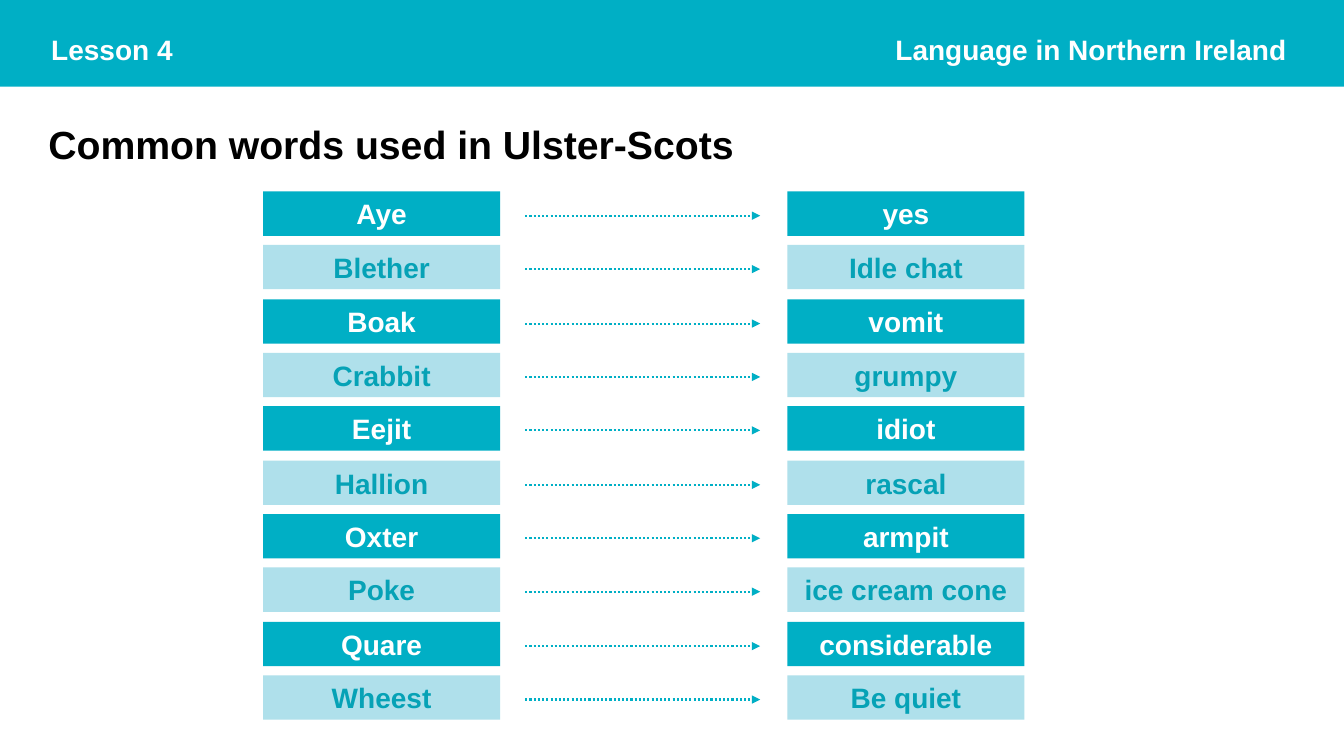
from lxml import etree
from pptx import Presentation
from pptx.dml.color import RGBColor
from pptx.enum.dml import MSO_LINE
from pptx.enum.shapes import MSO_CONNECTOR, MSO_SHAPE
from pptx.enum.text import MSO_ANCHOR, PP_ALIGN
from pptx.oxml.ns import qn
from pptx.util import Pt

PX = 9144
RECT, STRAIGHT = MSO_SHAPE.RECTANGLE, MSO_CONNECTOR.STRAIGHT
LEFT, CENTER, RIGHT = PP_ALIGN.LEFT, PP_ALIGN.CENTER, PP_ALIGN.RIGHT
TOP, MIDDLE = MSO_ANCHOR.TOP, MSO_ANCHOR.MIDDLE
DOTTED = MSO_LINE.ROUND_DOT
TEAL, PALE, DEEP, WHITE, BLACK = "00AFC5", "AFE0EB", "06A2B6", "FFFFFF", "000000"
WORDS = [
    ("Aye", "yes"),
    ("Blether", "Idle chat"),
    ("Boak", "vomit"),
    ("Crabbit", "grumpy"),
    ("Eejit", "idiot"),
    ("Hallion", "rascal"),
    ("Oxter", "armpit"),
    ("Poke", "ice cream cone"),
    ("Quare", "considerable"),
    ("Wheest", "Be quiet"),
]


def rgb(color):
    """Turn a hex string into a colour."""
    return RGBColor.from_string(color)


def emu(*lengths):
    """Turn px lengths into EMU."""
    return [length * PX for length in lengths]


def write(sp, text, color, size=20, align=LEFT, anchor=TOP):
    """Put one bold paragraph into a shape."""
    tf = sp.text_frame
    tf.word_wrap = True
    tf.vertical_anchor = anchor
    p = tf.paragraphs[0]
    p.text = text
    p.alignment = align
    p.font.name = "Arial"
    p.font.size = Pt(size)
    p.font.bold = True
    p.font.color.rgb = rgb(color)
    return p


def add_block(s, x, y, w, h, fill):
    """Add a plain filled rectangle."""
    sp = s.shapes.add_shape(RECT, *emu(x, y, w, h))
    sp.shadow.inherit = False
    sp.fill.solid()
    sp.fill.fore_color.rgb = rgb(fill)
    sp.line.fill.background()
    return sp


def add_arrow(s, x1, x2, y):
    """Add a dotted horizontal arrow."""
    line = s.shapes.add_connector(STRAIGHT, *emu(x1, y, x2, y))
    line.line.color.rgb = rgb(TEAL)
    line.line.width = Pt(1.5)
    line.line.dash_style = DOTTED
    etree.SubElement(line.line._get_or_add_ln(), qn("a:tailEnd"), type="triangle")
    etree.SubElement(line._element.spPr, qn("a:effectLst"))


def add_header(s, x, y, w, h):
    """Draw the banner with the lesson and the topic."""
    add_block(s, x, y, w, h, TEAL)
    labels = [(41, 173, "Lesson 4", LEFT),
              (594, 692, "Language in Northern Ireland", RIGHT)]
    for dx, width, text, align in labels:
        box = s.shapes.add_textbox(*emu(x + dx, y + 27, width, 44))
        write(box, text, WHITE, align=align)


def add_title(s, x, y, w, h):
    """Place and format the title."""
    title = s.shapes.title
    title.left, title.top, title.width, title.height = emu(x, y, w, h)
    p = write(title, "Common words used in Ulster-Scots", BLACK, 28, anchor=MIDDLE)
    p.line_spacing = 0.9


def add_word_list(s, x, y, w, h):
    """Draw rows pairing each word with its meaning."""
    box_w, box_h = 235, 44
    pitch = (h - box_h) / (len(WORDS) - 1)
    for i, pair in enumerate(WORDS):
        top = y + round(i * pitch)
        fill, color = ((TEAL, WHITE), (PALE, DEEP))[i % 2]
        for left, text in zip((x, x + w - box_w), pair):
            sp = add_block(s, left, top, box_w, box_h, fill)
            write(sp, text, color, align=CENTER, anchor=MIDDLE)
        add_arrow(s, x + box_w + 25, x + w - box_w - 27, top + 24)


def main():
    """Build and save the slide."""
    prs = Presentation()
    prs.slide_width, prs.slide_height = emu(1333, 750)
    s = prs.slides.add_slide(prs.slide_layouts[5])
    add_header(s, 0, 0, 1333, 86)
    add_title(s, 38, 111, 1150, 70)
    add_word_list(s, 261, 190, 755, 524)
    prs.save("out.pptx")


if __name__ == "__main__":
    main()
